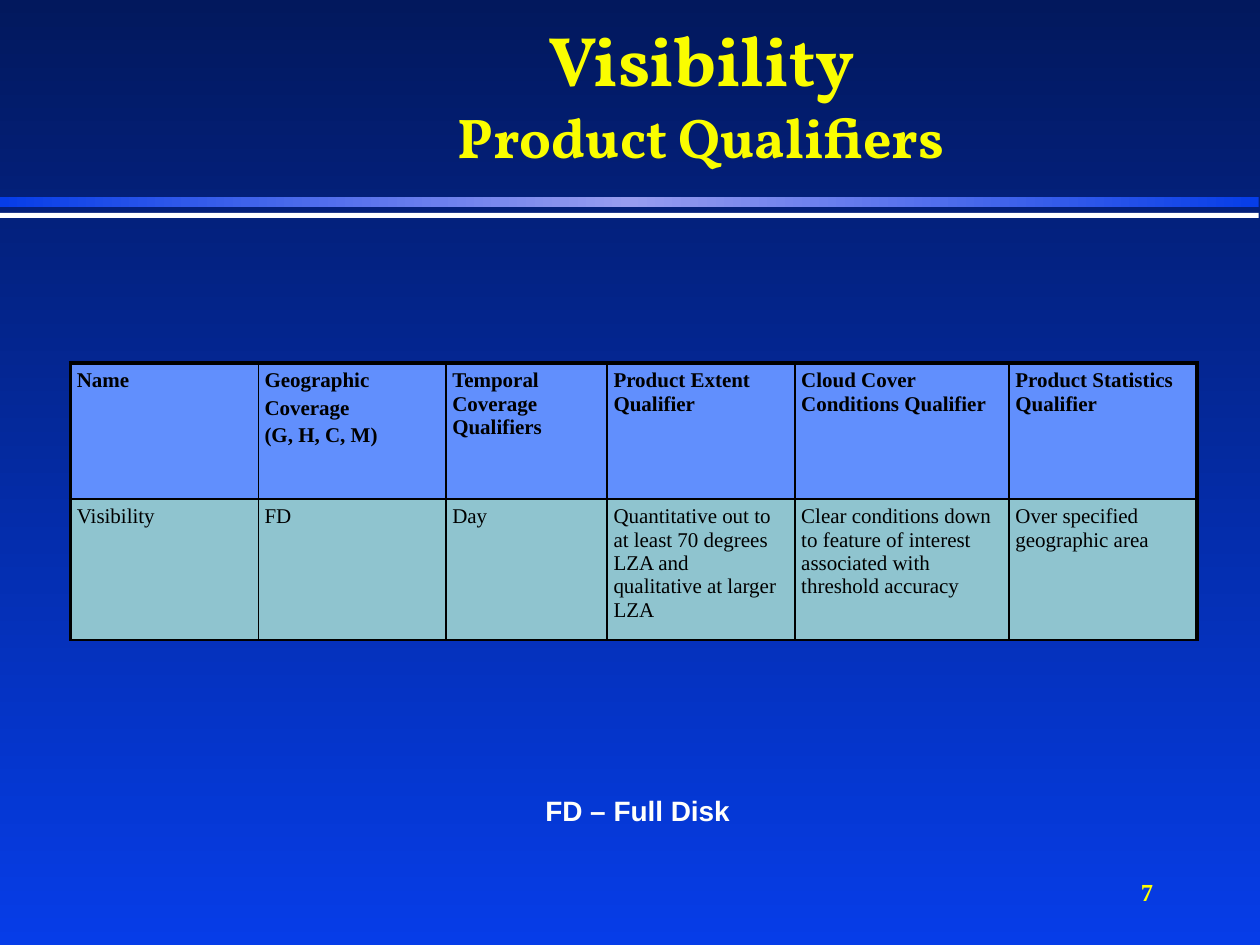
from copy import deepcopy

from lxml import etree
from pptx import Presentation
from pptx.dml.color import RGBColor
from pptx.enum.shapes import MSO_SHAPE as SHAPE
from pptx.enum.text import MSO_ANCHOR as ANCHOR, PP_ALIGN as ALIGN
from pptx.oxml.ns import qn
from pptx.util import Inches, Pt

NAVY = RGBColor(0x02, 0x18, 0x5D)
BLUE = RGBColor(0x06, 0x3D, 0xE8)
LILAC = RGBColor(0x97, 0x9C, 0xEF)
WHITE = RGBColor(0xFF, 0xFF, 0xFF)
IVORY = RGBColor(0xFF, 0xFF, 0xFB)
LEMON = RGBColor(0xFA, 0xFD, 0x00)
YELLOW = RGBColor(0xFF, 0xFF, 0x00)
BLACK = RGBColor(0, 0, 0)
HEADER_FILL = RGBColor(0x61, 0x8F, 0xFD)
BODY_FILL = RGBColor(0x8F, 0xC4, 0xCF)

TITLE = [("Visibility ", 40), ("Product Qualifiers", 32), (" ", 40)]
ROWS = [
    ["Name", "Geographic\nCoverage\n(G, H, C, M)", "Temporal Coverage Qualifiers",
     "Product Extent Qualifier", "Cloud Cover Conditions Qualifier",
     "Product Statistics Qualifier"],
    ["Visibility", "FD", "Day",
     "Quantitative out to at least 70 degrees LZA and qualitative at larger LZA",
     "Clear conditions down to feature of interest associated with threshold accuracy",
     "Over specified geographic area"],
]
COL_WIDTHS = [1.49, 1.49, 1.28, 1.49, 1.7, 1.49]
ROW_HEIGHTS = [1.08, 1.12]
THIN, THICK = 1, 2.25


def box(*at):
    return [Inches(v) for v in at]


def set_font(font, name, size, color, bold=True):
    values = {"name": name, "size": Pt(size), "bold": bold}
    for key, value in values.items():
        setattr(font, key, value)
    font.color.rgb = color


def set_gradient(fill, angle, colors):
    """Spread two or more colours evenly over a linear gradient."""
    fill.gradient()
    fill.gradient_angle = angle
    first = fill.gradient_stops[0]
    stops = first._gs.getparent()
    for _ in colors[2:]:
        stops.insert(1, deepcopy(first._gs))
    for i, (stop, color) in enumerate(zip(fill.gradient_stops, colors)):
        stop.position = i / (len(colors) - 1)
        stop.color.rgb = color


def add_bar(s, *at):
    bar = s.shapes.add_shape(SHAPE.RECTANGLE, *box(*at))
    bar.shadow.inherit = False
    bar.line.fill.background()
    return bar


def set_borders(cell, widths):
    """Draw black borders; widths are points for left, right, top, bottom."""
    tc_pr = cell._tc.get_or_add_tcPr()
    for i, (side, width) in enumerate(zip("LRTB", widths)):
        ln = etree.Element(qn(f"a:ln{side}"), w=str(Pt(width)))
        solid = etree.SubElement(ln, qn("a:solidFill"))
        etree.SubElement(solid, qn("a:srgbClr"), val=str(BLACK))
        tc_pr.insert(i, ln)


def add_title(s):
    title = s.shapes.title
    title.left, title.top, title.width, title.height = box(1.33, 0.17, 8.58, 1.25)
    tf = title.text_frame
    tf.vertical_anchor = ANCHOR.BOTTOM
    p = tf.paragraphs[0]
    p.alignment, p.line_spacing = ALIGN.CENTER, 0.85
    for i, (text, size) in enumerate(TITLE):
        if i == 1:
            p.add_line_break()
        r = p.add_run()
        r.text = text
        set_font(r.font, "Vollkorn", size, LEMON)


def add_qualifier_table(s):
    at = box(0.56, 2.88, sum(COL_WIDTHS), sum(ROW_HEIGHTS))
    table = s.shapes.add_table(len(ROWS), len(COL_WIDTHS), *at).table
    table.first_row = table.horz_banding = False
    for col, width in zip(table.columns, COL_WIDTHS):
        col.width = Inches(width)
    for row, height in zip(table.rows, ROW_HEIGHTS):
        row.height = Inches(height)
    last = len(COL_WIDTHS) - 1
    for i, texts in enumerate(ROWS):
        header = i == 0
        for j, text in enumerate(texts):
            cell = table.cell(i, j)
            cell.margin_left = Inches(0.05)
            cell.fill.solid()
            cell.fill.fore_color.rgb = HEADER_FILL if header else BODY_FILL
            edges = (j == 0, j == last, header, False)
            set_borders(cell, [THICK if edge else THIN for edge in edges])
            cell.text = text
            for k, p in enumerate(cell.text_frame.paragraphs):
                p.space_before = Pt(2.4 if k else 0)
                set_font(p.runs[0].font, "Times New Roman", 12, BLACK, header)


def add_label(s, at, text, font, wrap=True):
    tf = s.shapes.add_textbox(*box(*at)).text_frame
    tf.word_wrap = wrap
    p = tf.paragraphs[0]
    r = p.add_run()
    r.text = text
    set_font(r.font, *font)
    return tf, p


def main():
    prs = Presentation()
    prs.slide_width, prs.slide_height = box(10, 7.5)
    s = prs.slides.add_slide(prs.slide_layouts[5])
    set_gradient(s.background.fill, 270, [NAVY, BLUE])

    set_gradient(add_bar(s, 0, 1.56, 9.99, 0.08).fill, 0, [BLUE, LILAC, BLUE])
    rule = add_bar(s, 0, 1.69, 9.99, 0.04)
    rule.fill.solid()
    rule.fill.fore_color.rgb = WHITE

    add_title(s)
    add_qualifier_table(s)

    tf, p = add_label(s, (7.17, 6.83, 2.08, 0.5), "7",
                      ("Times New Roman", 14, YELLOW), wrap=False)
    tf.vertical_anchor = ANCHOR.MIDDLE
    p.alignment = ALIGN.RIGHT

    _, p = add_label(s, (3.23, 6.25, 7.93, 0.37), "FD – Full Disk",
                     ("Arial", 16, IVORY))
    p._p.get_or_add_pPr().set("marL", str(Inches(1)))

    prs.save("out.pptx")


if __name__ == "__main__":
    main()
